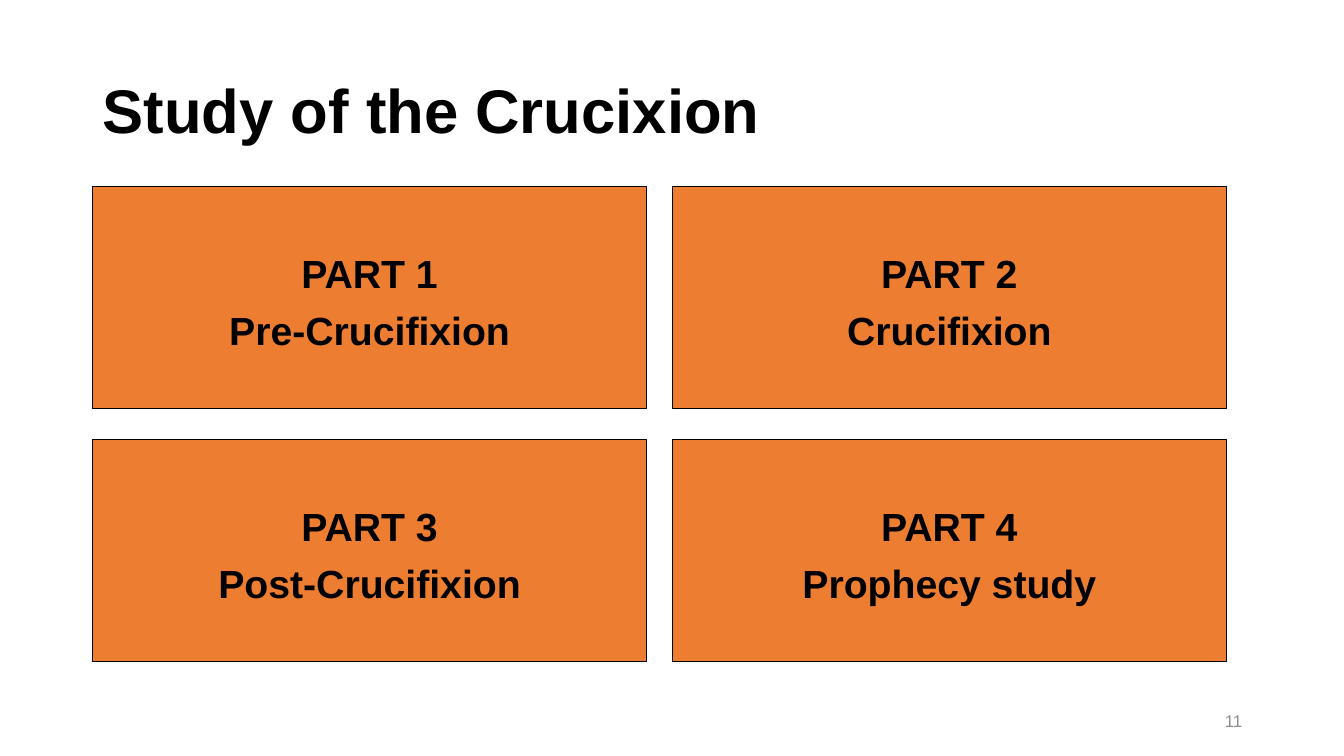
"""Build the four-part study overview slide."""
from pptx import Presentation
from pptx.dml.color import RGBColor
from pptx.enum.shapes import MSO_SHAPE
from pptx.enum.text import MSO_ANCHOR, PP_ALIGN
from pptx.util import Inches, Pt


def rgb(color):
    return RGBColor.from_string(color)


def style(p, size, color, align, bold=True):
    p.alignment = align
    p.font.name = "Arial"
    p.font.size = Pt(size)
    p.font.bold = bold
    p.font.color.rgb = rgb(color)


prs = Presentation()
prs.slide_width, prs.slide_height = Inches(13.33), Inches(7.5)
s = prs.slides.add_slide(prs.slide_layouts[5])

title = s.shapes.title
title.left, title.top = Inches(0.92), Inches(0.4)
title.width, title.height = Inches(11.5), Inches(1.45)
tf = title.text_frame
tf.text = "Study of the Crucixion"
tf.vertical_anchor = MSO_ANCHOR.MIDDLE
tf.paragraphs[0].line_spacing = 0.9
style(tf.paragraphs[0], 44, "000000", PP_ALIGN.LEFT)

parts = ["Pre-Crucifixion", "Crucifixion", "Post-Crucifixion", "Prophecy study"]
for i, part in enumerate(parts):
    row, col = divmod(i, 2)
    sp = s.shapes.add_shape(
        MSO_SHAPE.RECTANGLE, Inches(0.92 + 5.75 * col), Inches(1.85 + 2.51 * row),
        Inches(5.49), Inches(2.2))
    sp.shadow.inherit = False
    sp.fill.solid()
    sp.fill.fore_color.rgb = rgb("ED7D31")
    sp.line.color.rgb = rgb("000000")
    sp.line.width = Pt(0.75)
    tf = sp.text_frame
    tf.vertical_anchor = MSO_ANCHOR.TOP
    tf.margin_top = Inches(0.68)
    tf.text = f"PART {i + 1}\n{part}"
    for p in tf.paragraphs:
        p.line_spacing = 0.9
        style(p, 28, "000000", PP_ALIGN.CENTER)
    tf.paragraphs[1].space_before = Pt(10)

number = s.shapes.add_textbox(Inches(9.42), Inches(6.95), Inches(3), Inches(0.4))
tf = number.text_frame
tf.word_wrap = True
tf.vertical_anchor = MSO_ANCHOR.MIDDLE
tf.text = "11"
style(tf.paragraphs[0], 12, "8C8C8C", PP_ALIGN.RIGHT, bold=False)

prs.save("out.pptx")
